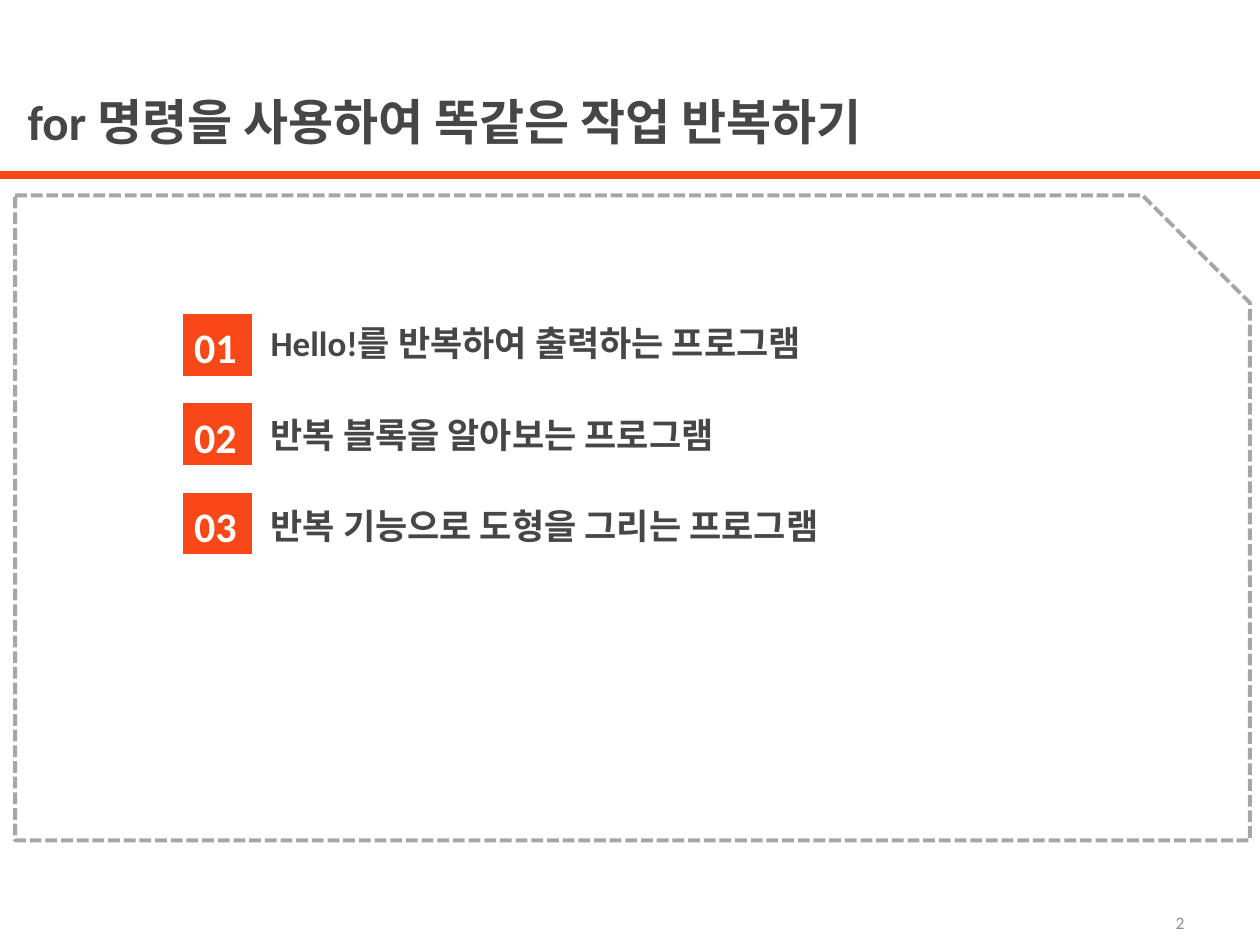
from dataclasses import dataclass

import pptx
import pptx.dml.color
import pptx.enum.dml
import pptx.enum.shapes
import pptx.enum.text
import pptx.oxml
import pptx.util

COLORS = {"accent": "F84818", "text": "464646", "white": "FFFFFF",
          "frame": "A6A6A6", "number": "8D8D8D"}
FONT = "Calibri"
SHAPE = pptx.enum.shapes.MSO_SHAPE
ALIGN = pptx.enum.text.PP_ALIGN
ANCHOR = pptx.enum.text.MSO_ANCHOR

# The page is a grid of 100 columns by 75 rows
WIDTH, HEIGHT = pptx.util.Inches(10), pptx.util.Inches(7.5)
COLUMN, ROW = WIDTH / 100, HEIGHT / 75
FIRST_TILE, TILE_PITCH = 24.9, 7.1


@dataclass
class Area:
    left: float
    top: float
    width: float
    height: float

    def lengths(self) -> tuple:
        return (round(self.left * COLUMN), round(self.top * ROW),
                round(self.width * COLUMN), round(self.height * ROW))


@dataclass
class Topic:
    number: str
    name: str


TOPICS = [
    Topic("01", "Hello!를 반복하여 출력하는 프로그램"),
    Topic("02", "반복 블록을 알아보는 프로그램"),
    Topic("03", "반복 기능으로 도형을 그리는 프로그램"),
]


def rgb(name: str) -> pptx.dml.color.RGBColor:
    return pptx.dml.color.RGBColor.from_string(COLORS[name])


def write(box, lines: list, size: float, color: str, bold: bool = True,
          align=ALIGN.LEFT, anchor=ANCHOR.TOP, spacing: float = 1.0,
          gap: float = 0) -> None:
    """Fill a box with one paragraph per line, with a gap between them."""
    frame = box.text_frame
    frame.word_wrap = True
    frame.auto_size = pptx.enum.text.MSO_AUTO_SIZE.NONE
    frame.vertical_anchor = anchor
    for index, line in enumerate(lines):
        para = frame.add_paragraph() if index else frame.paragraphs[0]
        para.alignment = align
        para.line_spacing = spacing
        para.space_before = pptx.util.Pt(gap if index else 0)
        span = para.add_run()
        span.text = line
        span.font.name = FONT
        span.font.size = pptx.util.Pt(size)
        span.font.bold = bold
        span.font.color.rgb = rgb(color)


def add_text(page, area: Area, lines: list, **style) -> None:
    write(page.shapes.add_textbox(*area.lengths()), lines, **style)


def add_rule(page, row: float) -> None:
    height = round(row * ROW)
    rule = page.shapes.add_connector(
        pptx.enum.shapes.MSO_CONNECTOR.STRAIGHT, 0, height, WIDTH, height)
    rule.line.color.rgb = rgb("accent")
    rule.line.width = pptx.util.Pt(4.5)
    rule._element.spPr.append(pptx.oxml.parse_xml(
        '<a:effectLst xmlns:a="http://schemas.openxmlformats.org/drawingml/2006/main"/>'))


def add_frame(page, area: Area) -> None:
    frame = page.shapes.add_shape(SHAPE.SNIP_1_RECTANGLE, *area.lengths())
    frame.shadow.inherit = False
    frame.fill.background()
    frame.line.color.rgb = rgb("frame")
    frame.line.width = pptx.util.Pt(2.25)
    frame.line.dash_style = pptx.enum.dml.MSO_LINE.SQUARE_DOT


def add_tile(page, topic: Topic, top: float) -> None:
    tile = page.shapes.add_shape(SHAPE.FLOWCHART_PROCESS,
                                 *Area(14.5, top, 5.5, 4.9).lengths())
    tile.shadow.inherit = False
    tile.fill.solid()
    tile.fill.fore_color.rgb = rgb("accent")
    tile.line.fill.background()
    add_text(page, Area(13.4, top + 0.15, 7.4, 5), [topic.number],
             size=24, color="white", align=ALIGN.CENTER)


def main() -> None:
    deck = pptx.Presentation()
    deck.slide_width, deck.slide_height = WIDTH, HEIGHT
    page = deck.slides.add_slide(deck.slide_layouts.get_by_name("Title Only"))

    # Title and the rule under it
    title = page.shapes.title
    title.left, title.top, title.width, title.height = Area(
        1.2, 6.8, 94.5, 5.7).lengths()
    write(title, ["for 명령을 사용하여 똑같은 작업 반복하기"], size=28, color="text")
    add_rule(page, 13.9)

    # Dashed frame with the numbered topics
    add_frame(page, Area(1.2, 15.5, 98, 51.2))
    for index, topic in enumerate(TOPICS):
        add_tile(page, topic, FIRST_TILE + index * TILE_PITCH)
    add_text(page, Area(20.5, 24.7, 69.7, 19.5), [topic.name for topic in TOPICS],
             size=20, color="text", spacing=1.1, gap=26)

    # Page number
    add_text(page, Area(71.7, 71.6, 23.3, 3.2), ["2"], size=10, color="number",
             bold=False, align=ALIGN.RIGHT, anchor=ANCHOR.MIDDLE)

    deck.save("out.pptx")


if __name__ == "__main__":
    main()
